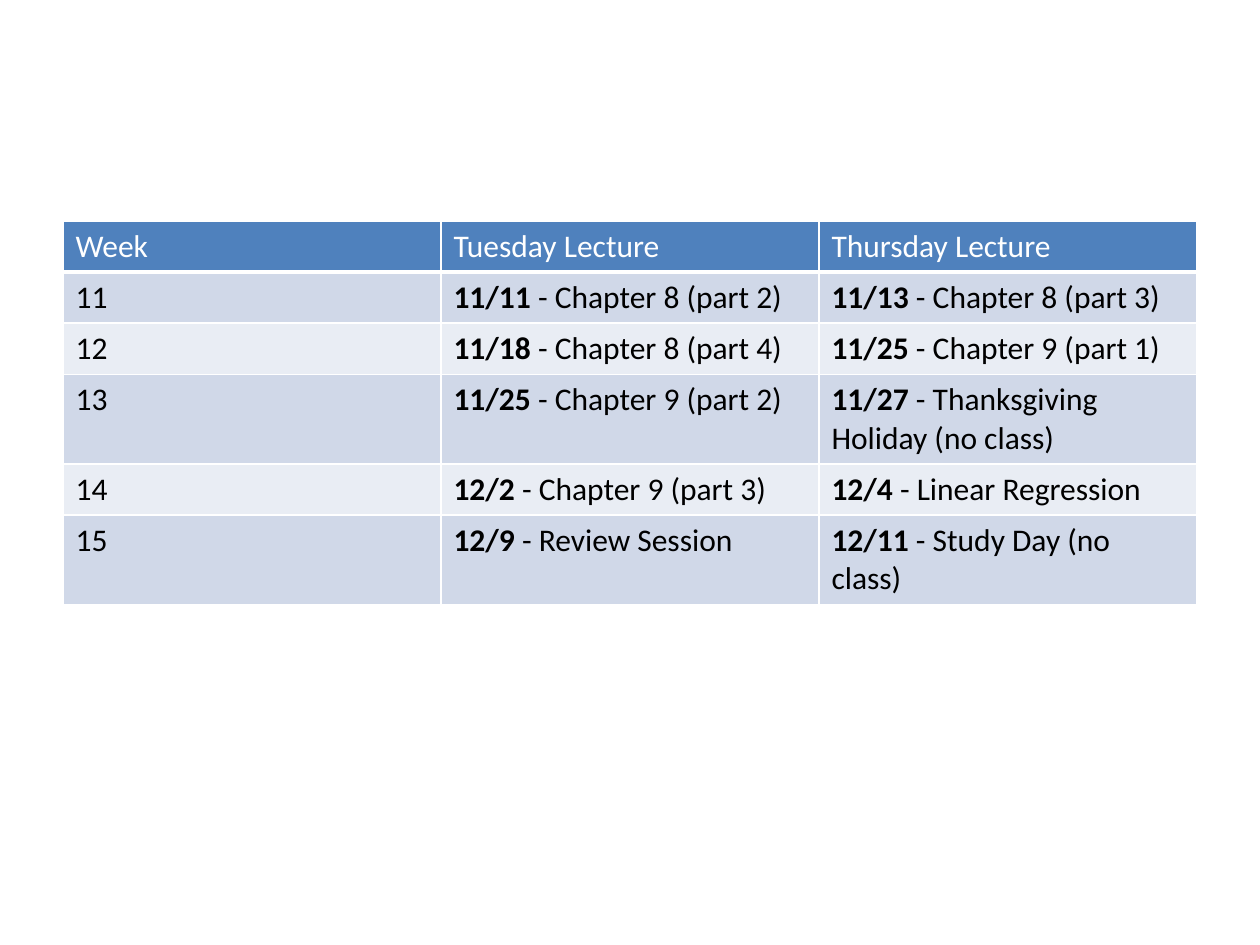
import pptx
import pptx.util
import pptx.dml.color
import pptx.oxml
import pptx.oxml.ns

PX = 914400 // 126  # EMU in one px
COLORS = {
    "header": "4F81BD",
    "odd_row": "D0D8E8",
    "even_row": "E9EDF4",
    "border": "FFFFFF",
    "header_text": "FFFFFF",
    "body_text": "000000",
}
FONT = {"name": "Calibri", "size": pptx.util.Pt(18)}
HEADINGS = ["Week", "Tuesday Lecture", "Thursday Lecture"]
# Week, then (date, topic) for Tuesday and for Thursday
SCHEDULE = [
    ("11", ("11/11", "Chapter 8 (part 2)"), ("11/13", "Chapter 8 (part 3)")),
    ("12", ("11/18", "Chapter 8 (part 4)"), ("11/25", "Chapter 9 (part 1)")),
    ("13", ("11/25", "Chapter 9 (part 2)"),
     ("11/27", "Thanksgiving Holiday (no class)")),
    ("14", ("12/2", "Chapter 9 (part 3)"), ("12/4", "Linear Regression")),
    ("15", ("12/9", "Review Session"), ("12/11", "Study Day (no class)")),
]
ROW_HEIGHTS = [51, 51, 51, 89, 51, 89]


def rgb(name):
    return pptx.dml.color.RGBColor.from_string(COLORS[name])


def add_run(paragraph, text, color, bold=False):
    run = paragraph.add_run()
    run.text = text
    for attribute, value in {**FONT, "bold": bold}.items():
        setattr(run.font, attribute, value)
    run.font.color.rgb = rgb(color)


def format_cell(cell, fill, bottom_width):
    # Borders go before the fill in the cell properties
    properties = cell._tc.get_or_add_tcPr()
    for side, width in {"L": 1, "R": 1, "T": 1, "B": bottom_width}.items():
        properties.append(pptx.oxml.parse_xml(
            f'<a:ln{side} {pptx.oxml.ns.nsdecls("a")} '
            f'w="{pptx.util.Pt(width)}"><a:solidFill>'
            f'<a:srgbClr val="{COLORS["border"]}"/>'
            f'</a:solidFill></a:ln{side}>'))
    cell.fill.solid()
    cell.fill.fore_color.rgb = rgb(fill)


def add_schedule(slide, left, top, width):
    rows = [HEADINGS, *SCHEDULE]
    box = (left, top, width, sum(ROW_HEIGHTS))
    table = slide.shapes.add_table(
        len(rows), len(HEADINGS), *(length * PX for length in box)).table
    for column in table.columns:
        column.width = width * PX // len(HEADINGS)

    for index, entries in enumerate(rows):
        table.rows[index].height = ROW_HEIGHTS[index] * PX
        is_header = index == 0
        fill = "header" if is_header else "odd_row" if index % 2 else "even_row"
        color = "header_text" if is_header else "body_text"
        for cell, entry in zip(table.rows[index].cells, entries):
            format_cell(cell, fill, 3 if is_header else 1)
            paragraph = cell.text_frame.paragraphs[0]
            if isinstance(entry, tuple):
                date, topic = entry
                add_run(paragraph, date, color, bold=True)
                add_run(paragraph, f" - {topic}", color)
            else:
                add_run(paragraph, entry, color)


def main():
    presentation = pptx.Presentation()
    presentation.slide_width = pptx.util.Inches(10)
    presentation.slide_height = pptx.util.Inches(7.5)
    slide = presentation.slides.add_slide(presentation.slide_layouts[6])
    # Lecture schedule
    add_schedule(slide, left=63, top=221, width=1134)
    presentation.save("out.pptx")


if __name__ == "__main__":
    main()
